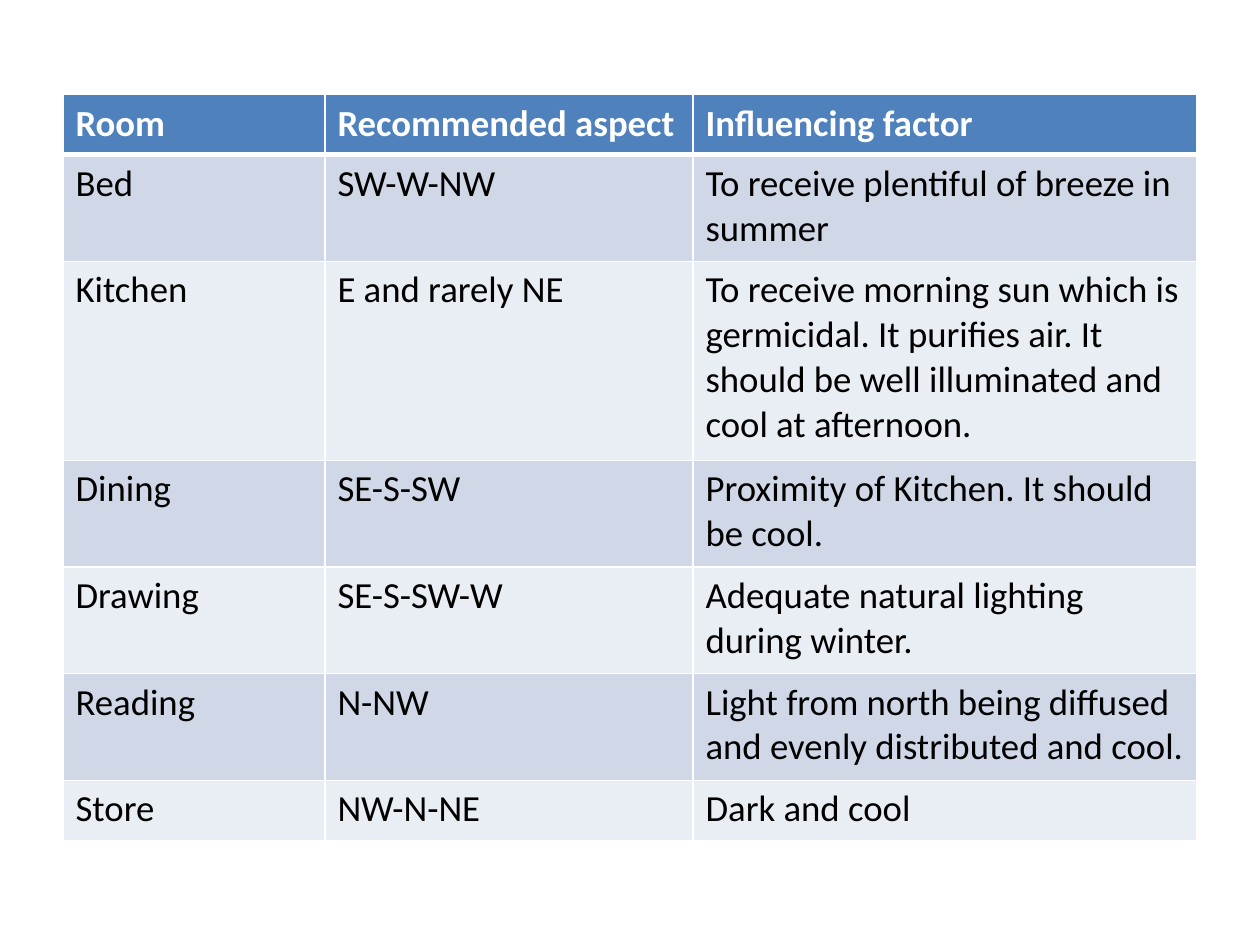
"""Build a slide with a table of recommended aspects for the rooms of a house."""
import lxml.etree
import pptx
import pptx.dml.color
import pptx.oxml.ns
import pptx.util

WHITE = pptx.dml.color.RGBColor(0xFF, 0xFF, 0xFF)
BLACK = pptx.dml.color.RGBColor(0x00, 0x00, 0x00)
HEADER_BLUE = pptx.dml.color.RGBColor(0x4F, 0x81, 0xBD)
BAND_DARK = pptx.dml.color.RGBColor(0xD0, 0xD8, 0xE8)
BAND_LIGHT = pptx.dml.color.RGBColor(0xE9, 0xED, 0xF4)


def write_text(cell, text, size=21, color=BLACK, bold=False):
    run = cell.text_frame.paragraphs[0].add_run()
    run.text = text
    run.font.name = "Calibri"
    run.font.size = pptx.util.Pt(size)
    run.font.bold = bold
    run.font.color.rgb = color


def add_border(cell, side, width, color=WHITE):
    qn = pptx.oxml.ns.qn
    properties = cell._tc.get_or_add_tcPr()
    line = lxml.etree.SubElement(properties, qn(f"a:ln{side}"), w=str(pptx.util.Pt(width)))
    fill = lxml.etree.SubElement(line, qn("a:solidFill"))
    lxml.etree.SubElement(fill, qn("a:srgbClr"), val=str(color))


room_aspects = [
    ("Room", "Recommended aspect", "Influencing factor"),
    ("Bed", "SW-W-NW", "To receive plentiful of breeze in summer"),
    ("Kitchen", "E and rarely NE",
     "To receive morning sun which is germicidal. It purifies air. "
     "It should be well illuminated and cool at afternoon."),
    ("Dining", "SE-S-SW", "Proximity of Kitchen. It should be cool."),
    ("Drawing", "SE-S-SW-W", "Adequate natural lighting during winter."),
    ("Reading", "N-NW", "Light from north being diffused and evenly distributed and cool."),
    ("Store", "NW-N-NE", "Dark and cool"),
]
column_widths = [5.28, 7.42, 10.16]
row_heights = [1.21, 2.15, 4.01, 2.15, 2.15, 2.15, 1.21]

presentation = pptx.Presentation()
presentation.slide_width = pptx.util.Cm(25.4)
presentation.slide_height = pptx.util.Cm(19.05)
slide = presentation.slides.add_slide(presentation.slide_layouts[6])

aspects = slide.shapes.add_table(
    len(room_aspects), len(column_widths),
    pptx.util.Cm(1.27), pptx.util.Cm(1.91),
    pptx.util.Cm(sum(column_widths)), pptx.util.Cm(sum(row_heights)),
).table

for column, width in zip(aspects.columns, column_widths):
    column.width = pptx.util.Cm(width)

for row_index, (entries, height) in enumerate(zip(room_aspects, row_heights)):
    aspects.rows[row_index].height = pptx.util.Cm(height)
    is_header = row_index == 0
    band = HEADER_BLUE if is_header else (BAND_LIGHT, BAND_DARK)[row_index % 2]
    top_width = 3 if row_index == 1 else 1
    bottom_width = 3 if is_header else 1
    for column_index, entry in enumerate(entries):
        cell = aspects.cell(row_index, column_index)
        write_text(cell, entry, color=WHITE if is_header else BLACK, bold=is_header)
        for side, width in (("L", 1), ("R", 1), ("T", top_width), ("B", bottom_width)):
            add_border(cell, side, width)
        cell.fill.solid()
        cell.fill.fore_color.rgb = band

presentation.save("out.pptx")
